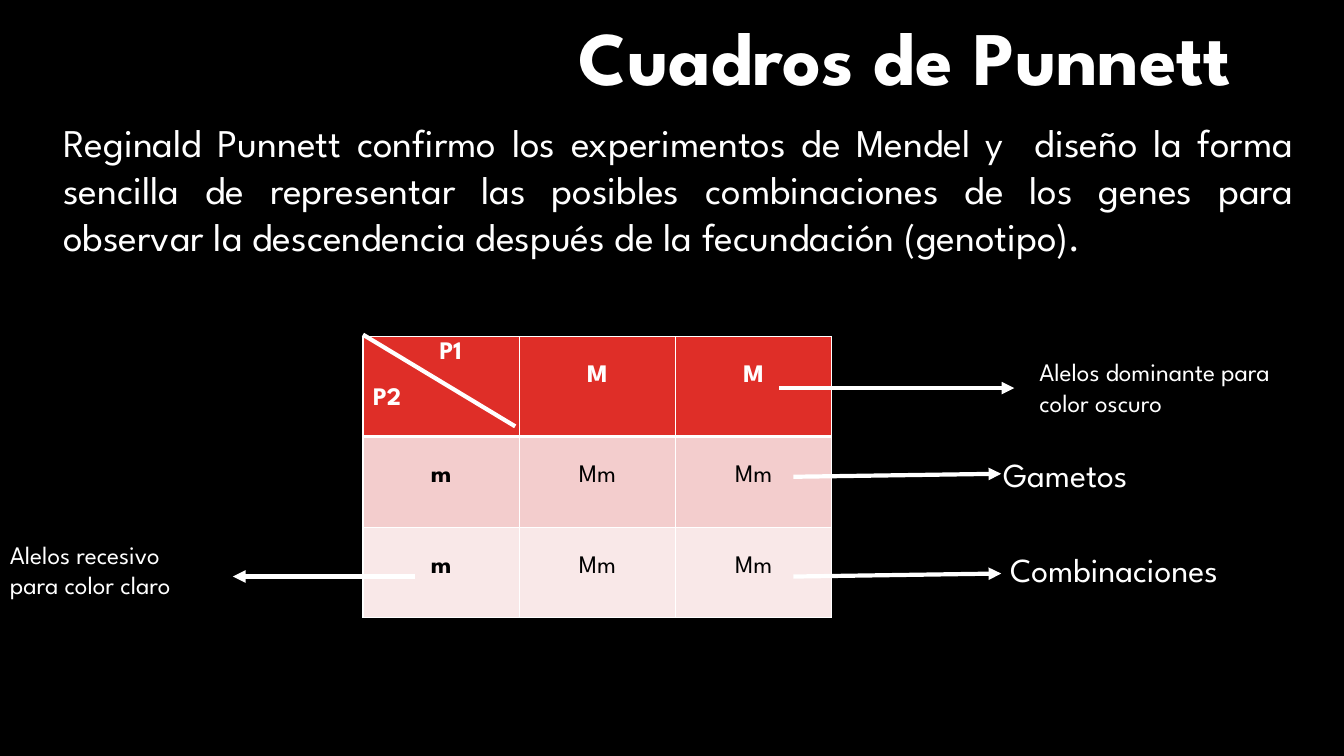
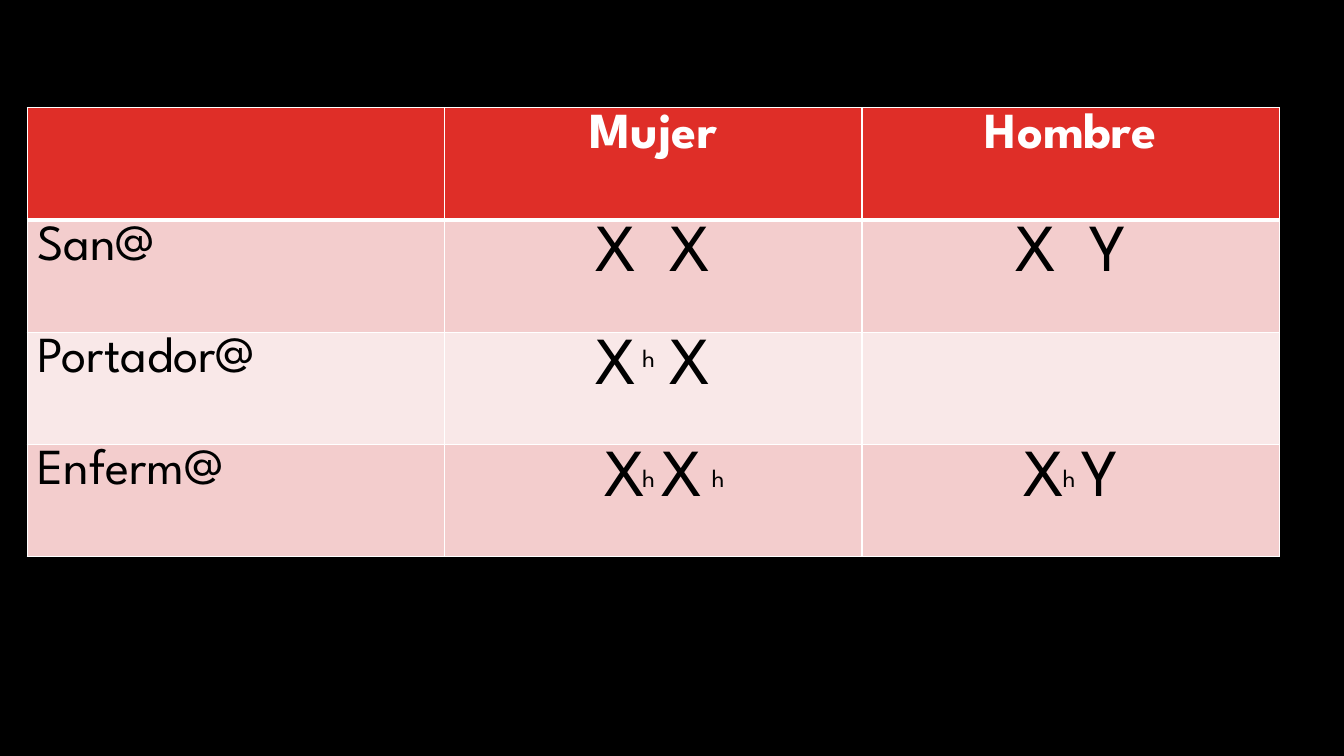
import dataclasses

import lxml.etree
import pptx
import pptx.dml.color
import pptx.enum.shapes
import pptx.enum.text
import pptx.oxml.ns
import pptx.util

PX = 9144
FONT = "League Spartan"
COLORS = {
    "background": "000000",
    "light": "FFFFFF",
    "dark": "000000",
    "header": "DF2E28",
    "odd_row": "F3CDCD",
    "even_row": "F9E8E8",
}
ALIGN = pptx.enum.text.PP_ALIGN


@dataclasses.dataclass(frozen=True)
class Label:
    text: str
    left: int
    top: int
    width: int
    height: int
    size: int
    color: str = "light"
    bold: bool = False
    align: ALIGN = ALIGN.LEFT


@dataclasses.dataclass(frozen=True)
class Stroke:
    start: tuple[int, int]
    end: tuple[int, int]
    arrow: bool = True


@dataclasses.dataclass(frozen=True)
class Grid:
    rows: list[list[str]]
    left: int
    top: int
    column_width: int
    row_heights: list[int]
    header_size: int
    first_column_size: int
    body_size: int
    first_column_bold: bool
    first_column_align: ALIGN
    margin_top: int


LABELS = [
    Label("Cuadros de Punnett", 564, 5, 769, 101, 54, bold=True),
    Label(
        "Reginald Punnett confirmo los experimentos de Mendel y  diseño la forma "
        "sencilla de representar las posibles combinaciones de los genes para "
        "observar la descendencia después de la fecundación (genotipo).",
        53, 112, 1240, 199, 28, align=ALIGN.JUSTIFY,
    ),
    Label("Gametos", 985, 445, 189, 50, 24),
    Label("Combinaciones", 992, 540, 281, 50, 24),
    Label("Alelos dominante para color oscuro", 1021, 349, 251, 71, 18),
    Label("Alelos recesivo para color claro", 0, 530, 221, 71, 18),
]
STROKES = [
    Stroke((360, 332), (511, 423), arrow=False),
    Stroke((787, 473), (993, 470)),
    Stroke((787, 572), (993, 569)),
    Stroke((773, 385), (1006, 385)),
    Stroke((412, 572), (231, 572)),
]
PUNNETT = Grid(
    rows=[["P1\nP2", "M", "M"], ["m", "Mm", "Mm"], ["m", "Mm", "Mm"]],
    left=360, top=334, column_width=155, row_heights=[99, 90, 90],
    header_size=18, first_column_size=18, body_size=18,
    first_column_bold=True, first_column_align=ALIGN.CENTER, margin_top=28,
)
INHERITANCE = Grid(
    rows=[
        ["", "Mujer", "Hombre"],
        ["San@", "X  X", "X  Y"],
        ["Portador@", "X  X", ""],
        ["Enferm@", "X X", "X Y"],
    ],
    left=27, top=107, column_width=414, row_heights=[111, 112, 111, 111],
    header_size=36, first_column_size=36, body_size=48,
    first_column_bold=False, first_column_align=ALIGN.LEFT, margin_top=5,
)
ALLELE_POSITIONS = [(627, 335), (627, 454), (1044, 454), (696, 454)]


def px(value: int) -> pptx.util.Emu:
    return pptx.util.Emu(value * PX)


def rgb(name: str) -> pptx.dml.color.RGBColor:
    return pptx.dml.color.RGBColor.from_string(COLORS[name])


def add_element(parent, tag: str, **attributes: str):
    return lxml.etree.SubElement(parent, pptx.oxml.ns.qn(tag), attributes)


def write_text(text_frame, text: str, size: int, color: str, bold: bool, align: ALIGN) -> None:
    text_frame.text = text
    for paragraph in text_frame.paragraphs:
        paragraph.alignment = align
        for run in paragraph.runs:
            run.font.name = FONT
            run.font.size = pptx.util.Pt(size)
            run.font.bold = bold
            run.font.color.rgb = rgb(color)


def draw_label(slide, label: Label) -> None:
    box = slide.shapes.add_textbox(
        px(label.left), px(label.top), px(label.width), px(label.height)
    )
    box.text_frame.word_wrap = True
    write_text(box.text_frame, label.text, label.size, label.color, label.bold, label.align)


def draw_stroke(slide, stroke: Stroke) -> None:
    connector = slide.shapes.add_connector(
        pptx.enum.shapes.MSO_CONNECTOR.STRAIGHT,
        *(px(value) for value in stroke.start + stroke.end),
    )
    connector.line.color.rgb = rgb("light")
    connector.line.width = pptx.util.Pt(3)
    properties = connector._element.spPr
    if stroke.arrow:
        add_element(properties.find(pptx.oxml.ns.qn("a:ln")), "a:tailEnd", type="triangle")
    add_element(properties, "a:effectLst")


def set_borders(cell, top: int, bottom: int) -> None:
    properties = cell._tc.get_or_add_tcPr()
    for side, points in (("L", 1), ("R", 1), ("T", top), ("B", bottom)):
        line = add_element(properties, f"a:ln{side}", w=str(pptx.util.Pt(points)))
        fill = add_element(line, "a:solidFill")
        add_element(fill, "a:srgbClr", val=COLORS["light"])


def draw_grid(slide, grid: Grid):
    row_count, column_count = len(grid.rows), len(grid.rows[0])
    table = slide.shapes.add_table(
        row_count, column_count, px(grid.left), px(grid.top),
        px(grid.column_width * column_count), px(sum(grid.row_heights)),
    ).table
    for column in table.columns:
        column.width = px(grid.column_width)
    for row_index, texts in enumerate(grid.rows):
        table.rows[row_index].height = px(grid.row_heights[row_index])
        header = row_index == 0
        band = "header" if header else "odd_row" if row_index % 2 else "even_row"
        for column_index, text in enumerate(texts):
            cell = table.cell(row_index, column_index)
            first = column_index == 0
            set_borders(cell, 3 if row_index == 1 else 1, 3 if header else 1)
            cell.fill.solid()
            cell.fill.fore_color.rgb = rgb(band)
            cell.margin_top = px(grid.margin_top)
            size = grid.first_column_size if first else grid.body_size
            write_text(
                cell.text_frame,
                text,
                grid.header_size if header else size,
                "light" if header else "dark",
                header or (first and grid.first_column_bold),
                grid.first_column_align if first else ALIGN.CENTER,
            )
    return table


def align_parents(cell) -> None:
    cell.margin_top = px(5)
    first_parent, second_parent = cell.text_frame.paragraphs
    first_parent.alignment = second_parent.alignment = ALIGN.LEFT
    first_parent._p.get_or_add_pPr().set("marL", str(px(66)))
    second_parent.space_before = pptx.util.Pt(16.5)


def build_punnett_slide(slide) -> None:
    table = draw_grid(slide, PUNNETT)
    align_parents(table.cell(0, 0))
    for stroke in STROKES:
        draw_stroke(slide, stroke)
    for label in LABELS:
        draw_label(slide, label)


def build_inheritance_slide(slide) -> None:
    draw_grid(slide, INHERITANCE)
    for left, top in ALLELE_POSITIONS:
        draw_label(slide, Label("h", left, top, 33, 40, 18, color="dark"))


def main() -> None:
    presentation = pptx.Presentation()
    presentation.slide_width = px(1333)
    presentation.slide_height = px(750)
    background = presentation.slide_master.background.fill
    background.solid()
    background.fore_color.rgb = rgb("background")
    blank_layout = presentation.slide_layouts[6]
    for build_slide in (build_punnett_slide, build_inheritance_slide):
        build_slide(presentation.slides.add_slide(blank_layout))
    presentation.save("out.pptx")


if __name__ == "__main__":
    main()
